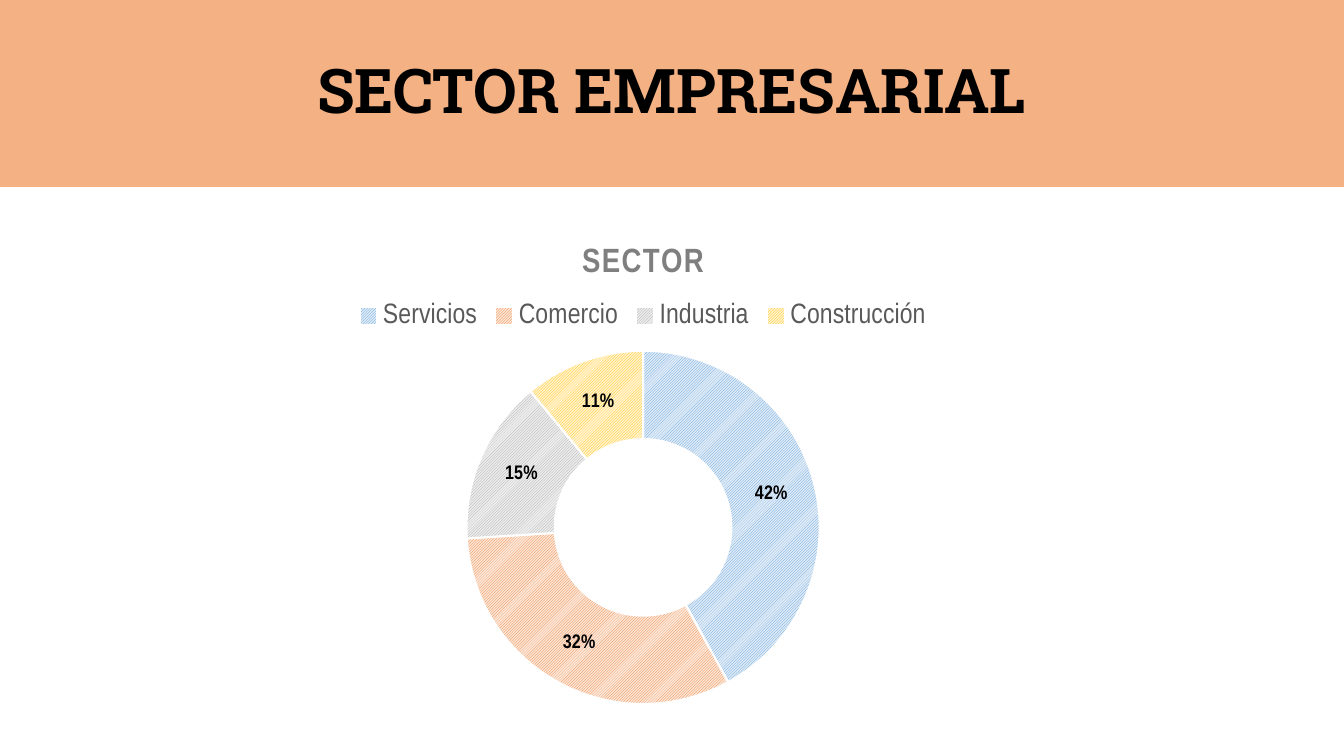
from lxml import etree
from pptx import Presentation
from pptx.chart.data import CategoryChartData
from pptx.dml.color import RGBColor
from pptx.enum.chart import XL_CHART_TYPE, XL_LEGEND_POSITION
from pptx.enum.dml import MSO_PATTERN
from pptx.enum.text import MSO_ANCHOR, PP_ALIGN
from pptx.oxml.ns import qn
from pptx.util import Pt

PX = 9525
DOUGHNUT = XL_CHART_TYPE.DOUGHNUT
LEGEND_TOP = XL_LEGEND_POSITION.TOP
HATCH = MSO_PATTERN.LIGHT_UPWARD_DIAGONAL
MIDDLE = MSO_ANCHOR.MIDDLE
CENTER = PP_ALIGN.CENTER

COLORS = {
    "banner": "F4B183",
    "black": "000000",
    "white": "FFFFFF",
    "chart_title": "7F7F7F",
    "legend": "595959",
}
SECTORS = [
    ("Servicios", 42, "5B9BD5", "DEEBF7"),
    ("Comercio", 32, "ED7D31", "FBE5D6"),
    ("Industria", 15, "A5A5A5", "EDEDED"),
    ("Construcción", 11, "FFC000", "FFF2CC"),
]


def rgb(value):
    return RGBColor.from_string(value)


def set_font(font, name, size, color, bold=False):
    font.name = name
    font.size = Pt(size)
    font.bold = bold
    font.color.rgb = rgb(color)


def place(sp, box):
    sp.left, sp.top, sp.width, sp.height = (v * PX for v in box)


def add_banner(s, box, text):
    sp = s.shapes.title
    place(sp, box)
    sp.fill.solid()
    sp.fill.fore_color.rgb = rgb(COLORS["banner"])
    tf = sp.text_frame
    tf.text = text
    tf.word_wrap = True
    tf.vertical_anchor = MIDDLE
    p = tf.paragraphs[0]
    p.alignment = CENTER
    p.line_spacing = 0.9
    set_font(p.font, "Roboto Slab", 44, COLORS["black"], True)


def set_plot_layout(chart, x, y, w, h):
    area = chart._chartSpace.chart.plotArea
    for old in area.findall(qn("c:layout")):
        area.remove(old)
    layout = etree.Element(qn("c:layout"))
    area.insert(0, layout)
    manual = etree.SubElement(layout, qn("c:manualLayout"))
    settings = [("layoutTarget", "inner"), ("xMode", "edge"), ("yMode", "edge"),
                ("x", x), ("y", y), ("w", w), ("h", h)]
    for tag, value in settings:
        etree.SubElement(manual, qn(f"c:{tag}")).set("val", str(value))


def add_sector_chart(s, box, title):
    data = CategoryChartData()
    data.categories = [name for name, *_ in SECTORS]
    data.add_series("Series 1", [value for _, value, *_ in SECTORS])
    chart = s.shapes.add_chart(DOUGHNUT, *(v * PX for v in box), data).chart
    set_font(chart.font, "Calibri", 10, COLORS["black"])

    chart.has_title = True
    tf = chart.chart_title.text_frame
    tf.text = title
    p = tf.paragraphs[0]
    set_font(p.font, "Arial Narrow", 24, COLORS["chart_title"], True)
    p.runs[0].font._element.set("spc", "100")
    chart.chart_title.include_in_layout = False

    chart.has_legend = True
    chart.legend.position = LEGEND_TOP
    chart.legend.include_in_layout = False
    set_font(chart.legend.font, "Arial Narrow", 20, COLORS["legend"])

    plot = chart.plots[0]
    plot.vary_by_categories = True
    plot._element.find(qn("c:holeSize")).set("val", "70")
    for i, (_, _, fore, back) in enumerate(SECTORS):
        fmt = plot.series[0].points[i].format
        fmt.fill.patterned()
        fmt.fill.pattern = HATCH
        fmt.fill.fore_color.rgb = rgb(fore)
        fmt.fill.back_color.rgb = rgb(back)
        fmt.line.color.rgb = rgb(COLORS["white"])
        fmt.line.width = Pt(1.5)

    labels = plot.series[0].data_labels
    labels.show_percentage = True
    labels.show_value = False
    labels.number_format = "0%"
    labels.number_format_is_linked = False
    set_font(labels.font, "Arial Narrow", 14, COLORS["black"], True)
    set_plot_layout(chart, 0.29, 0.25, 0.42, 0.72)


def main():
    prs = Presentation()
    prs.slide_width, prs.slide_height = 1280 * PX, 720 * PX
    s = prs.slides.add_slide(prs.slide_layouts[5])
    add_banner(s, (0, 0, 1280, 178), "SECTOR EMPRESARIAL")
    add_sector_chart(s, (212, 212, 801, 476), "SECTOR")
    prs.save("out.pptx")


if __name__ == "__main__":
    main()
